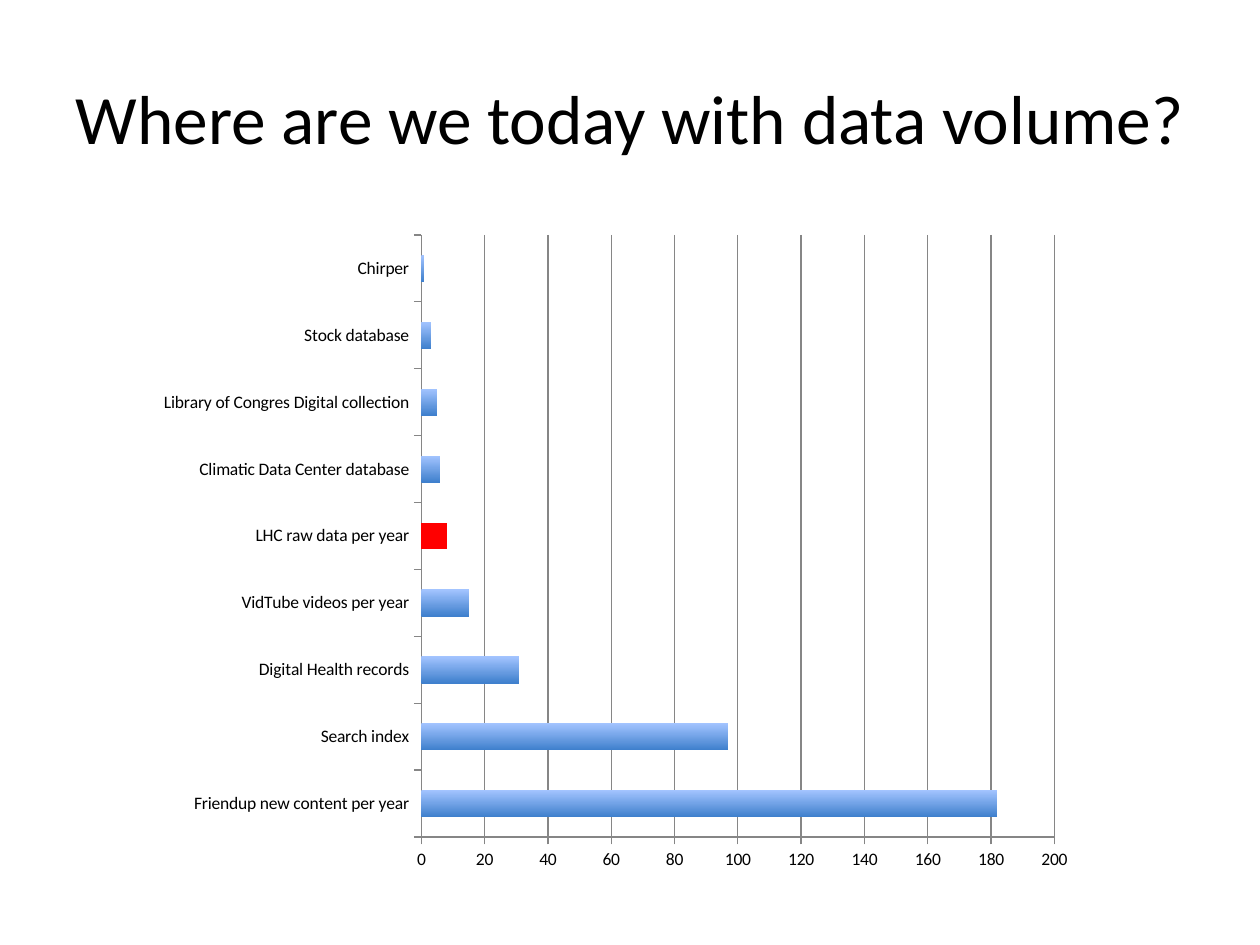
from lxml import etree
from pptx import Presentation
from pptx.chart.data import CategoryChartData
from pptx.dml.color import RGBColor
from pptx.enum.chart import XL_CHART_TYPE as ChartType, XL_TICK_MARK as Tick
from pptx.enum.text import MSO_ANCHOR as Anchor, PP_ALIGN as Align
from pptx.oxml.ns import qn
from pptx.util import Cm, Pt

TITLE = "Where are we today with data volume?"
VOLUMES = [
    ("Friendup new content per year", 182),
    ("Search index", 97),
    ("Digital Health records", 31),
    ("VidTube videos per year", 15),
    ("LHC raw data per year", 8),
    ("Climatic Data Center database", 6),
    ("Library of Congres Digital collection", 5),
    ("Stock database", 3),
    ("Chirper", 1),
]
HIGHLIGHT = "LHC raw data per year"
FONT = "Calibri"
COLORS = {
    "text": "000000",
    "bar_top": "A3C4FF",
    "bar_bottom": "3F80CD",
    "highlight": "FF0000",
    "line": "868686",
}
# Inner plot area as fractions of the chart
PLOT = {"x": 0.29, "y": 0.02, "w": 0.67, "h": 0.91}


def color(name):
    return RGBColor.from_string(COLORS[name])


def add_text(page, text, left, top, width, height, size, align=Align.CENTER):
    box = page.shapes.add_textbox(Cm(left), Cm(top), Cm(width), Cm(height))
    frame = box.text_frame
    frame.word_wrap = True
    frame.vertical_anchor = Anchor.MIDDLE
    frame.margin_left = frame.margin_right = Cm(0)
    para = frame.paragraphs[0]
    para.alignment = align
    span = para.add_run()
    span.text = text
    span.font.name = FONT
    span.font.size = Pt(size)
    span.font.color.rgb = color("text")


def style_line(line):
    line.color.rgb = color("line")
    line.width = Pt(0.75)


def set_plot_layout(chart):
    plot_area = chart.plots[0]._element.getparent()
    layout = plot_area.find(qn("c:layout"))
    if layout is None:
        layout = etree.Element(qn("c:layout"))
        plot_area.insert(0, layout)
    manual = etree.SubElement(layout, qn("c:manualLayout"))
    settings = [("layoutTarget", "inner"), ("xMode", "edge"), ("yMode", "edge")]
    for tag, value in settings + list(PLOT.items()):
        etree.SubElement(manual, qn("c:" + tag)).set("val", str(value))


deck = Presentation()
deck.slide_width, deck.slide_height = Cm(25.4), Cm(19.05)
page = deck.slides.add_slide(deck.slide_layouts[6])

# Title
add_text(page, TITLE, 1.27, 0.76, 22.86, 3.18, size=39.6)

# Bar chart
data = CategoryChartData()
data.categories = [label for label, _ in VOLUMES]
data.add_series("Series 1", [value for _, value in VOLUMES])
chart = page.shapes.add_chart(
    ChartType.BAR_CLUSTERED, Cm(2.97), Cm(4.47), Cm(19.05), Cm(13.34), data
).chart
chart.has_legend = False
chart.has_title = False
chart.font.name = FONT
chart.font.size = Pt(10)
chart.font.color.rgb = color("text")
set_plot_layout(chart)

# Axes and gridlines
for axis in (chart.category_axis, chart.value_axis):
    axis.major_tick_mark = Tick.OUTSIDE
    axis.minor_tick_mark = Tick.NONE
    style_line(axis.format.line)
chart.category_axis.has_major_gridlines = False
scale = chart.value_axis
scale.minimum_scale, scale.maximum_scale, scale.major_unit = 0, 200, 20
scale.has_major_gridlines = True
style_line(scale.major_gridlines.format.line)

# Bars
plot = chart.plots[0]
plot.gap_width = 150
plot.vary_by_categories = False
series = plot.series[0]
series.invert_if_negative = False
fill = series.format.fill
fill.gradient()
fill.gradient_angle = 270
for stop, name in zip(fill.gradient_stops, ("bar_top", "bar_bottom")):
    stop.color.rgb = color(name)
highlight_index = [label for label, _ in VOLUMES].index(HIGHLIGHT)
highlight_fill = series.points[highlight_index].format.fill
highlight_fill.solid()
highlight_fill.fore_color.rgb = color("highlight")

deck.save("out.pptx")
